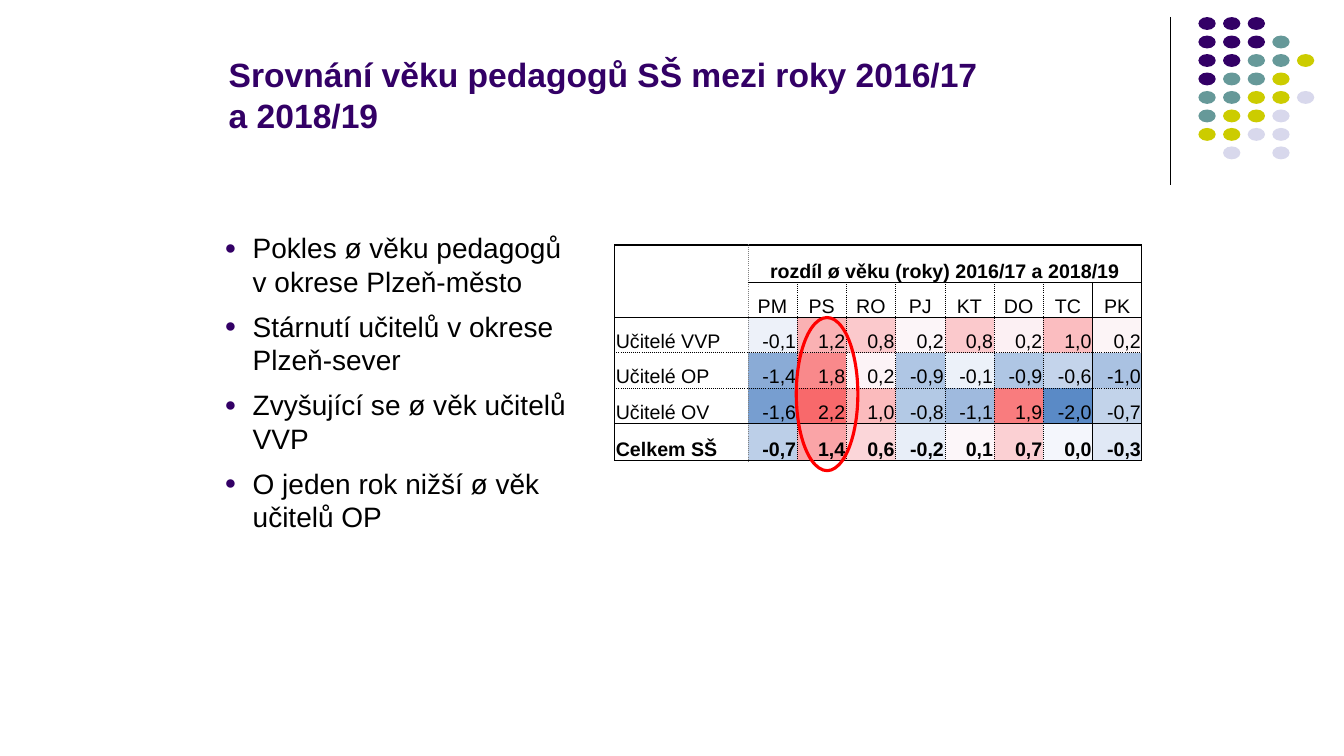
from lxml import etree
from pptx import Presentation
from pptx.dml.color import RGBColor
from pptx.enum.shapes import MSO_CONNECTOR as Connector, MSO_SHAPE as Shape
from pptx.enum.text import MSO_ANCHOR as Anchor, MSO_AUTO_SIZE as AutoSize, PP_ALIGN as Align
from pptx.oxml.ns import qn
from pptx.util import Pt

FONT = "Arial"
BLACK, PURPLE, RED = "000000", "330066", "FF0000"

DOT_COLOURS = {"P": PURPLE, "T": "669999", "Y": "CCCC00", "L": "D8D8EC"}
DOT_ROWS = ["PPP", "PPPT", "PPTTY", "PTTY", "TTYYL", "TYYL", "YYLL", " L L"]

BULLETS = [
    ["Pokles ø věku pedagogů", "v okrese Plzeň-město"],
    ["Stárnutí učitelů v okrese Plzeň-sever"],
    ["Zvyšující se ø věk učitelů VVP"],
    ["O jeden rok nižší ø věk učitelů OP"],
]

TABLE_TITLE = "rozdíl ø věku (roky) 2016/17 a 2018/19"
DISTRICTS = "PM PS RO PJ KT DO TC PK".split()
AGE_CHANGES = {
    "Učitelé VVP": "-0,1 1,2 0,8 0,2 0,8 0,2 1,0 0,2",
    "Učitelé OP": "-1,4 1,8 0,2 -0,9 -0,1 -0,9 -0,6 -1,0",
    "Učitelé OV": "-1,6 2,2 1,0 -0,8 -1,1 1,9 -2,0 -0,7",
    "Celkem SŠ": "-0,7 1,4 0,6 -0,2 0,1 0,7 0,0 -0,3",
}
HEAT_COLOURS = [
    "EDF1F9 FAB1B3 FBC9CC FCF5F8 FBC9CC FCF0F3 FBBDC0 FCF4F6",
    "8AABD6 F9898B FCF3F6 AFC6E4 ECF1F9 AFC6E4 C4D4EB AAC2E2",
    "779ED0 F8696B FBBBBD B3C9E5 9FBADE F97C7E 5A8AC6 C2D3EA",
    "BCCFE8 FAA4A7 FBD6D9 E8EEF8 FCF6F9 FBD0D3 F4F6FC E0E8F5",
]
ROW_HEIGHTS = [26.6, 25.2, 25.2, 25.2, 25.2, 26.6]
COLUMN_WIDTHS = [95] + [35.2] * 8

# Rules of the table grid: colour, width in points, dash
OUTER = (BLACK, 1, "solid")
INNER = (BLACK, 0.5, "solid")
DOTTED = (BLACK, 0.5, "dot")
LABEL_EDGE = ("808080", 0.5, "sysDot")
VERTICAL_RULES = [OUTER, LABEL_EDGE] + [DOTTED] * 6 + [INNER, OUTER]
HORIZONTAL_RULES = [OUTER, INNER, INNER, DOTTED, DOTTED, INNER, OUTER]


def colour(value):
    return RGBColor.from_string(value)


def child(parent, tag, **attributes):
    return etree.SubElement(parent, qn(tag), attributes)


def add_run(paragraph, text, size, ink=BLACK, bold=False):
    run = paragraph.add_run()
    run.text = text
    run.font.name = FONT
    run.font.size = Pt(size)
    run.font.bold = bold
    run.font.color.rgb = colour(ink)


def add_ellipse(slide, left, top, width, height, fill=None, line=None):
    ellipse = slide.shapes.add_shape(
        Shape.OVAL, Pt(left), Pt(top), Pt(width), Pt(height))
    ellipse.shadow.inherit = False
    if fill:
        ellipse.fill.solid()
        ellipse.fill.fore_color.rgb = colour(fill)
    else:
        ellipse.fill.background()
    if line:
        ellipse.line.color.rgb = colour(line)
        ellipse.line.width = Pt(2.25)
    else:
        ellipse.line.fill.background()


def add_corner_decoration(slide):
    divider = slide.shapes.add_connector(
        Connector.STRAIGHT, Pt(836), Pt(12), Pt(836), Pt(132))
    divider.line.color.rgb = colour(BLACK)
    divider.line.width = Pt(0.75)
    child(divider._element.spPr, "a:effectLst")
    for row, letters in enumerate(DOT_ROWS):
        for column, letter in enumerate(letters):
            if letter in DOT_COLOURS:
                add_ellipse(slide, 856 + 17.6 * column, 12.2 + 13.2 * row,
                            12.4, 9.2, fill=DOT_COLOURS[letter])


def set_title(slide, text):
    title = slide.shapes.title
    title.left, title.top, title.width, title.height = Pt(156.2), Pt(1), Pt(566.6), Pt(99)
    frame = title.text_frame
    frame.auto_size = AutoSize.NONE
    frame.vertical_anchor = Anchor.BOTTOM
    frame.paragraphs[0].alignment = Align.LEFT
    add_run(frame.paragraphs[0], text, 24, PURPLE, bold=True)


def set_bullet(paragraph):
    paragraph.space_before = Pt(8)
    properties = paragraph._p.get_or_add_pPr()
    properties.set("marL", str(Pt(20)))
    properties.set("indent", str(-Pt(20)))
    child(child(properties, "a:buClr"), "a:srgbClr", val=PURPLE)
    child(properties, "a:buSzPct", val="70000")
    child(properties, "a:buFont", typeface=FONT)
    child(properties, "a:buChar", char="●")


def add_bullets(slide):
    frame = slide.shapes.add_textbox(Pt(153.4), Pt(161.3), Pt(277), Pt(259)).text_frame
    frame.word_wrap = True
    for index, lines in enumerate(BULLETS):
        paragraph = frame.add_paragraph() if index else frame.paragraphs[0]
        set_bullet(paragraph)
        for number, line in enumerate(lines):
            if number:
                paragraph.add_line_break()
            add_run(paragraph, line, 20)


def set_borders(cell, row, column):
    """Rule the outer edges of a cell, taking in all that it spans."""
    bottom = row + (cell.span_height if cell.is_merge_origin else 1)
    right = column + (cell.span_width if cell.is_merge_origin else 1)
    edges = {
        "a:lnL": VERTICAL_RULES[column], "a:lnR": VERTICAL_RULES[right],
        "a:lnT": HORIZONTAL_RULES[row], "a:lnB": HORIZONTAL_RULES[bottom],
    }
    properties = cell._tc.get_or_add_tcPr()
    for position, (tag, (ink, width, dash)) in enumerate(edges.items()):
        line = child(properties, tag, w=str(Pt(width)))
        child(child(line, "a:solidFill"), "a:srgbClr", val=ink)
        child(line, "a:prstDash", val=dash)
        properties.insert(position, line)


def format_cell(cell, row, column):
    cell.margin_left = cell.margin_right = cell.margin_top = Pt(0.7)
    cell.margin_bottom = 0
    cell.vertical_anchor = Anchor.BOTTOM
    cell.fill.background()
    if not cell.is_spanned:
        set_borders(cell, row, column)


def write_cell(cell, text, alignment, bold=False):
    paragraph = cell.text_frame.paragraphs[0]
    paragraph.alignment = alignment
    add_run(paragraph, text, 14, bold=bold)


def add_age_table(slide):
    table = slide.shapes.add_table(
        len(ROW_HEIGHTS), len(COLUMN_WIDTHS), Pt(439.2), Pt(175),
        Pt(sum(COLUMN_WIDTHS)), Pt(sum(ROW_HEIGHTS))).table
    table.first_row = table.horz_banding = False
    for row, height in zip(table.rows, ROW_HEIGHTS):
        row.height = Pt(height)
    for column, width in zip(table.columns, COLUMN_WIDTHS):
        column.width = Pt(width)
    table.cell(0, 0).merge(table.cell(1, 0))
    table.cell(0, 1).merge(table.cell(0, 8))
    for row in range(len(ROW_HEIGHTS)):
        for column in range(len(COLUMN_WIDTHS)):
            format_cell(table.cell(row, column), row, column)

    write_cell(table.cell(0, 1), TABLE_TITLE, Align.CENTER, bold=True)
    for column, district in enumerate(DISTRICTS, 1):
        write_cell(table.cell(1, column), district, Align.CENTER)
    for row, (label, values) in enumerate(AGE_CHANGES.items(), 2):
        bold = label == "Celkem SŠ"
        write_cell(table.cell(row, 0), label, Align.LEFT, bold)
        fills = HEAT_COLOURS[row - 2].split()
        for column, (value, fill) in enumerate(zip(values.split(), fills), 1):
            cell = table.cell(row, column)
            write_cell(cell, value, Align.RIGHT, bold)
            cell.fill.solid()
            cell.fill.fore_color.rgb = colour(fill)


def main():
    presentation = Presentation()
    presentation.slide_width, presentation.slide_height = Pt(960), Pt(540)
    slide = presentation.slides.add_slide(presentation.slide_layouts[5])
    add_corner_decoration(slide)
    set_title(slide, "Srovnání věku pedagogů SŠ mezi roky 2016/17 a 2018/19")
    add_age_table(slide)
    add_bullets(slide)
    add_ellipse(slide, 568.8, 226.8, 44, 109.4, line=RED)
    presentation.save("out.pptx")


if __name__ == "__main__":
    main()
